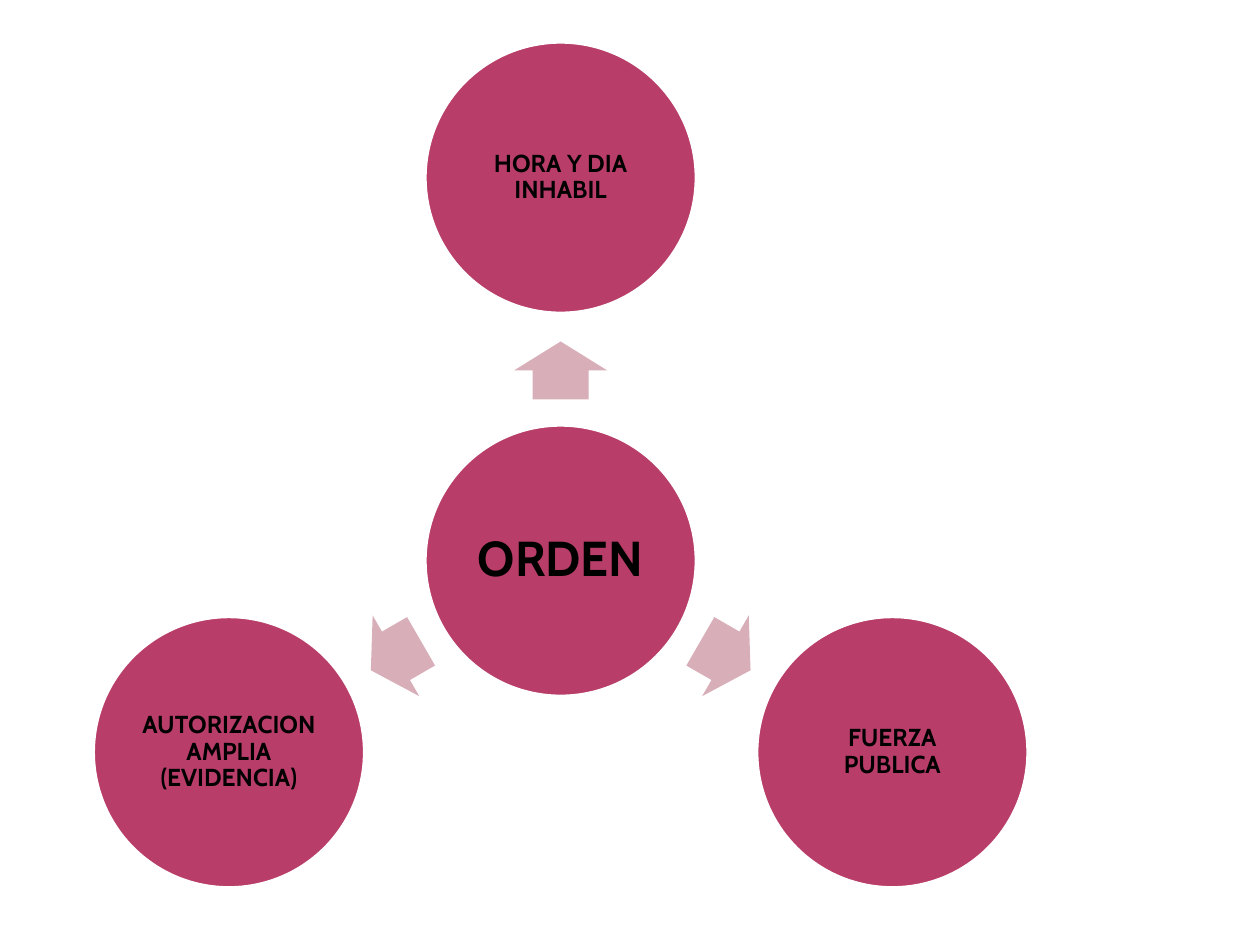
from dataclasses import dataclass
from math import cos, radians, sin

from pptx import Presentation
from pptx.dml.color import RGBColor
from pptx.enum import shapes, text
from pptx.util import Inches, Pt

FONT = "Cabin"
ROSE, PINK, WHITE, BLACK = "B83D68", "D8AFB9", "FFFFFF", "000000"
HUB_X = HUB_Y = 4.45
SIZE = 2.17       # circle diameter
ORBIT = 3.04      # hub centre to outer circle centre
REACH = 1.51      # hub centre to arrow centre
ARROW_W, ARROW_H = 0.46, 0.74


@dataclass
class Spoke:
    label: str
    angle: int    # degrees clockwise from the right


SPOKES = [
    Spoke("HORA Y DIA INHABIL", 270),
    Spoke("FUERZA PUBLICA", 30),
    Spoke("AUTORIZACION AMPLIA (EVIDENCIA)", 150),
]


def color(code: str) -> RGBColor:
    return RGBColor.from_string(code)


def polar(angle: float, dist: float) -> tuple[float, float]:
    """Point at a distance from the hub centre, in inches."""
    turn = radians(angle)
    return HUB_X + dist * cos(turn), HUB_Y + dist * sin(turn)


def add_shape(slide, kind, x: float, y: float, w: float, h: float, fill: str):
    """Add a flat filled shape centred on x, y."""
    shape = slide.shapes.add_shape(
        kind, Inches(x - w / 2), Inches(y - h / 2), Inches(w), Inches(h))
    shape.shadow.inherit = False
    shape.fill.solid()
    shape.fill.fore_color.rgb = color(fill)
    return shape


def add_circle(slide, x: float, y: float, label: str, size: int, inset: float) -> None:
    disc = add_shape(slide, shapes.MSO_SHAPE.OVAL, x, y, SIZE, SIZE, ROSE)
    disc.line.color.rgb = color(WHITE)
    disc.line.width = Pt(3.15)
    frame = disc.text_frame
    frame.word_wrap = True
    frame.vertical_anchor = text.MSO_ANCHOR.MIDDLE
    frame.margin_left = frame.margin_right = Inches(inset)
    frame.margin_top = frame.margin_bottom = Inches(inset)
    para = frame.paragraphs[0]
    para.text = label
    para.alignment = text.PP_ALIGN.CENTER
    para.line_spacing = 0.9
    para.font.name = FONT
    para.font.size = Pt(size)
    para.font.bold = True
    para.font.color.rgb = color(BLACK)


def add_arrow(slide, angle: int) -> None:
    x, y = polar(angle, REACH)
    arrow = add_shape(
        slide, shapes.MSO_SHAPE.RIGHT_ARROW, x, y, ARROW_W, ARROW_H, PINK)
    arrow.adjustments[0] = 0.6
    arrow.adjustments[1] = 0.5
    arrow.line.fill.background()
    arrow.rotation = angle


def main() -> None:
    deck = Presentation()
    deck.slide_width, deck.slide_height = Inches(10), Inches(7.5)
    slide = deck.slides.add_slide(deck.slide_layouts[6])
    add_circle(slide, HUB_X, HUB_Y, "ORDEN", 28, 0.04)
    for spoke in SPOKES:
        add_arrow(slide, spoke.angle)
        add_circle(slide, *polar(spoke.angle, ORBIT), spoke.label, 14, 0.02)
    deck.save("out.pptx")


if __name__ == "__main__":
    main()
